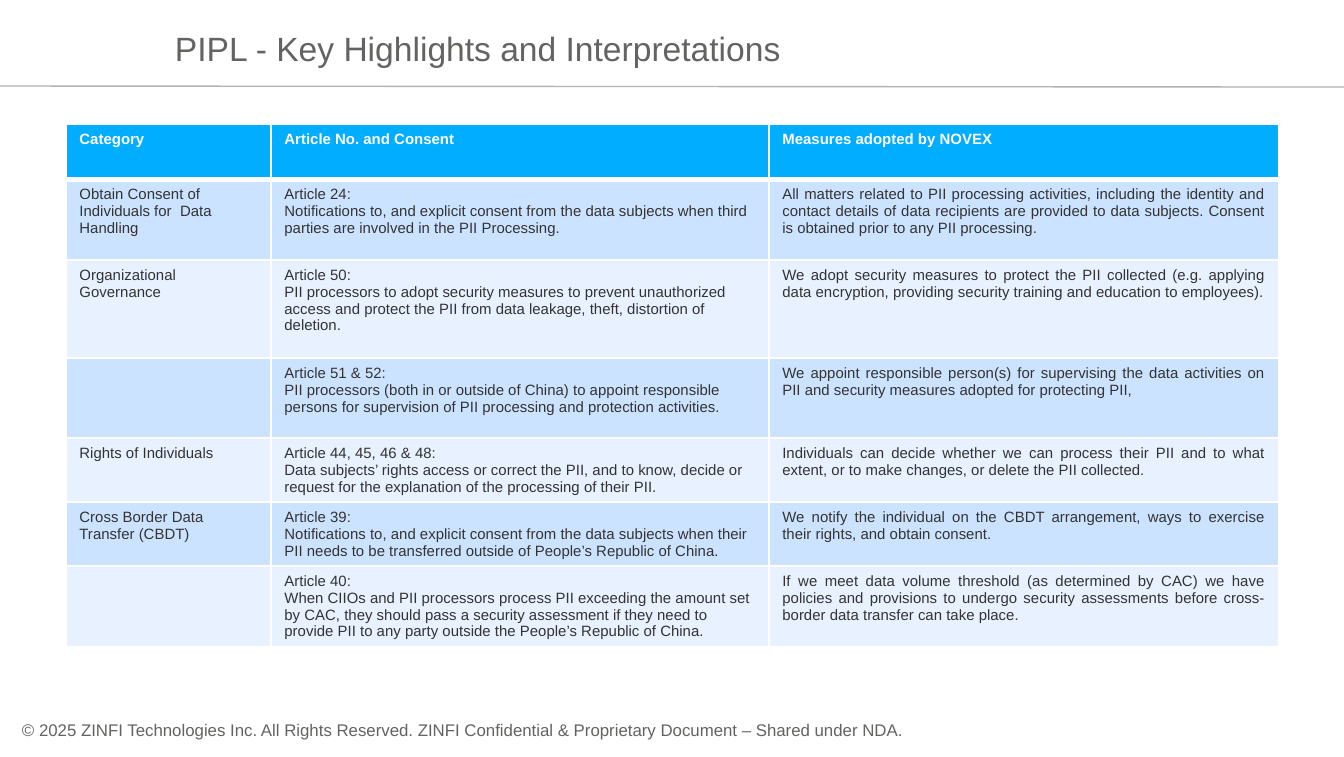
import pptx
import pptx.dml.color
import pptx.enum.shapes
import pptx.enum.text
import pptx.oxml
import pptx.oxml.ns
import pptx.util
from dataclasses import dataclass

SCALE = 914400 / 134.4  # EMU in one px


@dataclass
class Theme:
    font: str = "Arial"
    grey: str = "636361"
    rule: str = "B2B2B2"
    white: str = "FFFFFF"
    ink: str = "333333"
    head: str = "00ADFF"
    bands: tuple = ("CCE3FF", "E7F1FF")
    title: int = 18
    foot: int = 9
    cell: int = 8


theme = Theme()
RGB = pptx.dml.color.RGBColor.from_string
ALIGN = pptx.enum.text.PP_ALIGN


def px(*nums):
    return [pptx.util.Emu(round(num * SCALE)) for num in nums]


def style(frame, size, color, bold=False, align=ALIGN.LEFT):
    for para in frame.paragraphs:
        para.alignment = align
        for run in para.runs:
            run.font.name = theme.font
            run.font.size = pptx.util.Pt(size)
            run.font.bold = bold
            run.font.color.rgb = RGB(color)


deck = pptx.Presentation()
deck.slide_width = pptx.util.Inches(10)
deck.slide_height = pptx.util.Inches(5.63)
slide = deck.slides.add_slide(deck.slide_layouts[5])
shapes = slide.shapes

# Header rule
rule = shapes.add_connector(
    pptx.enum.shapes.MSO_CONNECTOR.STRAIGHT, *px(0, 86, 1344, 87))
rule.line.color.rgb = RGB(theme.rule)
rule.line.width = pptx.util.Pt(0.75)
rule._element.spPr.append(pptx.oxml.parse_xml(
    f'<a:effectLst {pptx.oxml.ns.nsdecls("a")}/>'))

# Title and footer
title = shapes.title
title.left, title.top, title.width, title.height = px(175, 3, 742, 65)
title.text_frame.text = "PIPL - Key Highlights and Interpretations"
foot = shapes.add_textbox(*px(22, 720, 970, 20))
foot.text_frame.text = (
    "© 2025 ZINFI Technologies Inc. All Rights Reserved. "
    "ZINFI Confidential & Proprietary Document – Shared under NDA.")
for box, size in ((title, theme.title), (foot, theme.foot)):
    frame = box.text_frame
    frame.margin_left = frame.margin_right = 0
    frame.margin_top = frame.margin_bottom = 0
    frame.word_wrap = True
    frame.auto_size = pptx.enum.text.MSO_AUTO_SIZE.NONE
    frame.vertical_anchor = pptx.enum.text.MSO_ANCHOR.BOTTOM
    style(frame, size, theme.grey)

# Table of articles
rows = [
    ("Category", "Article No. and Consent", "Measures adopted by NOVEX"),
    ("Obtain Consent of Individuals for  Data Handling",
     "Article 24:\nNotifications to, and explicit consent from the data "
     "subjects when third parties are involved in the PII Processing.",
     "All matters related to PII processing activities, including the "
     "identity and contact details of data recipients are provided to data "
     "subjects. Consent is obtained prior to any PII processing."),
    ("Organizational\nGovernance",
     "Article 50:\nPII processors to adopt security measures to prevent "
     "unauthorized access and protect the PII from data leakage, theft, "
     "distortion of deletion.",
     "We adopt security measures to protect the PII collected (e.g. applying "
     "data encryption, providing security training and education to "
     "employees)."),
    ("",
     "Article 51 & 52:\nPII processors (both in or outside of China) to "
     "appoint responsible persons for supervision of PII processing and "
     "protection activities.",
     "We appoint responsible person(s) for supervising the data activities "
     "on PII and security measures adopted for protecting PII,"),
    ("Rights of Individuals",
     "Article 44, 45, 46 & 48:\nData subjects’ rights access or correct the "
     "PII, and to know, decide or request for the explanation of the "
     "processing of their PII.",
     "Individuals can decide whether we can process their PII and to what "
     "extent, or to make changes, or delete the PII collected."),
    ("Cross Border Data Transfer (CBDT)",
     "Article 39:\nNotifications to, and explicit consent from the data "
     "subjects when their PII needs to be transferred outside of People’s "
     "Republic of China.",
     "We notify the individual on the CBDT arrangement, ways to exercise "
     "their rights, and obtain consent."),
    ("",
     "Article 40:\nWhen CIIOs and PII processors process PII exceeding the "
     "amount set by CAC, they should pass a security assessment if they need "
     "to provide PII to any party outside the People’s Republic of China.",
     "If we meet data volume threshold (as determined by CAC) we have "
     "policies and provisions to undergo security assessments before "
     "cross-border data transfer can take place."),
]
widths = (205, 498, 510)
heights = (55, 81, 98, 80, 64, 64, 80)
table = shapes.add_table(
    len(rows), len(widths), *px(66, 124, sum(widths), sum(heights))).table
for col, width in zip(table.columns, px(*widths)):
    col.width = width
for row, height in zip(table.rows, px(*heights)):
    row.height = height

for i, texts in enumerate(rows):
    first = i == 0
    fill = theme.head if first else theme.bands[(i - 1) % 2]
    for j, text in enumerate(texts):
        cell = table.cell(i, j)
        cell.text_frame.text = text
        style(cell.text_frame, theme.cell,
              theme.white if first else theme.ink, first,
              ALIGN.JUSTIFY if j == 2 and not first else ALIGN.LEFT)
        cell.fill.solid()
        cell.fill.fore_color.rgb = RGB(fill)
        # Borders must come before the fill in the cell's XML
        for k, side in enumerate("LRTB"):
            thick = (first and side == "B") or (i == 1 and side == "T")
            width = pptx.util.Pt(3 if thick else 1)
            cell._tc.get_or_add_tcPr().insert(k, pptx.oxml.parse_xml(
                f'<a:ln{side} {pptx.oxml.ns.nsdecls("a")} w="{width}">'
                f'<a:solidFill><a:srgbClr val="{theme.white}"/></a:solidFill>'
                f'</a:ln{side}>'))

deck.save("out.pptx")
